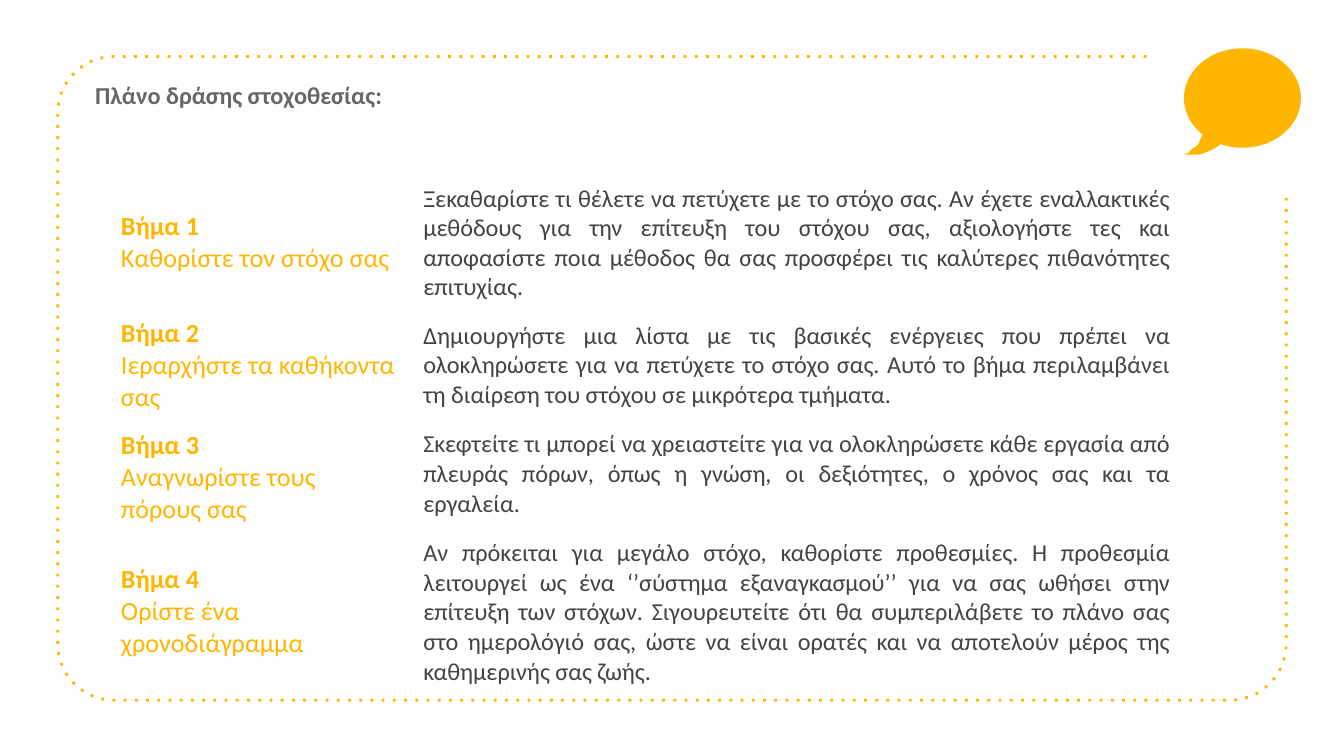
import math
from dataclasses import dataclass

from lxml import etree
from pptx import Presentation
from pptx.dml.color import RGBColor
from pptx.enum.text import MSO_ANCHOR, PP_ALIGN
from pptx.oxml.ns import qn
from pptx.util import Inches, Pt

AMBER = RGBColor(0xFF, 0xB6, 0x00)
GRAY = RGBColor(0x66, 0x66, 0x66)
DARK = RGBColor(0x43, 0x43, 0x43)
FONT = "Calibri"
TOP, MIDDLE = MSO_ANCHOR.TOP, MSO_ANCHOR.MIDDLE
LEFT, JUSTIFY = PP_ALIGN.LEFT, PP_ALIGN.JUSTIFY

Point = tuple[float, float]


@dataclass
class Step:
    task: str
    detail: str
    height: float
    anchor: MSO_ANCHOR = TOP


STEPS = [
    Step("Καθορίστε τον στόχο σας",
         "Ξεκαθαρίστε τι θέλετε να πετύχετε με το στόχο σας. Αν έχετε εναλλακτικές "
         "μεθόδους για την επίτευξη του στόχου σας, αξιολογήστε τες και αποφασίστε "
         "ποια μέθοδος θα σας προσφέρει τις καλύτερες πιθανότητες επιτυχίας.", 0.72),
    Step("Ιεραρχήστε τα καθήκοντα σας",
         "Δημιουργήστε μια λίστα με τις βασικές ενέργειες που πρέπει να ολοκληρώσετε "
         "για να πετύχετε το στόχο σας. Αυτό το βήμα περιλαμβάνει τη διαίρεση του "
         "στόχου σε μικρότερα τμήματα.", 0.85, MIDDLE),
    Step("Αναγνωρίστε τους πόρους σας",
         "Σκεφτείτε τι μπορεί να χρειαστείτε για να ολοκληρώσετε κάθε εργασία από "
         "πλευράς πόρων, όπως η γνώση, οι δεξιότητες, ο χρόνος σας και τα εργαλεία.",
         0.41),
    Step("Ορίστε ένα χρονοδιάγραμμα",
         "Αν πρόκειται για μεγάλο στόχο, καθορίστε προθεσμίες. Η προθεσμία λειτουργεί "
         "ως ένα ‘’σύστημα εξαναγκασμού’’ για να σας ωθήσει στην επίτευξη των στόχων. "
         "Σιγουρευτείτε ότι θα συμπεριλάβετε το πλάνο σας στο ημερολόγιό σας, ώστε να "
         "είναι ορατές και να αποτελούν μέρος της καθημερινής σας ζωής.", 0.91),
]


def arc(cx: float, cy: float, rx: float, ry: float,
        start: float, end: float, count: int) -> list[Point]:
    """Points along an ellipse, in degrees clockwise from the right."""
    angles = [math.radians(start + (end - start) * i / count) for i in range(count + 1)]
    return [(cx + rx * math.cos(a), cy + ry * math.sin(a)) for a in angles]


def add_outline(slide, points: list[Point], close: bool):
    pts = [(Inches(x), Inches(y)) for x, y in points]
    builder = slide.shapes.build_freeform(*pts[0])
    builder.add_line_segments(pts[1:], close=close)
    s = builder.convert_to_shape()
    s.shadow.inherit = False
    return s


def write(p, text: str, *, size: float, color: RGBColor,
          bold: bool = False, align: PP_ALIGN = LEFT) -> None:
    p.alignment = align
    r = p.add_run()
    r.text = text
    r.font.name, r.font.size, r.font.bold = FONT, Pt(size), bold
    r.font.color.rgb = color


def add_frame(slide) -> None:
    radius = 0.42
    points = [(8.53, 0.42)]
    for cx, cy, start in ((0.85, 0.84, 270), (0.85, 4.79, 180), (9.15, 4.79, 90)):
        points += arc(cx, cy, radius, radius, start, start - 90, 16)
    points.append((9.57, 1.46))
    s = add_outline(slide, points, close=False)
    s.fill.background()
    s.line.color.rgb = AMBER
    s.line.width = Pt(1.5)
    ln = s._element.spPr.find(qn("a:ln"))
    etree.SubElement(ln, qn("a:prstDash")).set("val", "dot")


def add_bubble(slide) -> None:
    tail = [(8.94, 1.02), (8.93, 1.04), (8.92, 1.07), (8.9, 1.09), (8.88, 1.1),
            (8.86, 1.12), (8.84, 1.14), (8.81, 1.15), (8.88, 1.15), (8.92, 1.15),
            (8.96, 1.14), (9.01, 1.12), (9.06, 1.09)]
    body = arc(9.245, 0.73, 0.435, 0.37, 112, -227, 90)
    s = add_outline(slide, body + tail, close=True)
    s.fill.solid()
    s.fill.fore_color.rgb = AMBER
    s.line.fill.background()


def add_title(slide, text: str) -> None:
    s = slide.shapes.add_textbox(Inches(0.61), Inches(0.5), Inches(6.84), Inches(0.5))
    tf = s.text_frame
    tf.word_wrap = True
    tf.margin_left = tf.margin_right = tf.margin_top = tf.margin_bottom = Inches(0.1)
    p = tf.paragraphs[0]
    p.space_before = Pt(6)
    write(p, text, size=13, color=GRAY, bold=True)


def add_steps(slide, steps: list[Step]) -> None:
    height = sum(step.height for step in steps)
    table = slide.shapes.add_table(len(steps), 2, Inches(0.8), Inches(1.32),
                                   Inches(8), Inches(height)).table
    table.first_row = table.horz_banding = False
    for col, width in zip(table.columns, (2.25, 5.75)):
        col.width = Inches(width)
    for i, step in enumerate(steps):
        table.rows[i].height = Inches(step.height)
        label, detail = table.cell(i, 0), table.cell(i, 1)
        for cell, anchor in ((label, MIDDLE), (detail, step.anchor)):
            cell.fill.background()
            cell.vertical_anchor = anchor
            cell.margin_bottom = Inches(0.06)
        tf = label.text_frame
        write(tf.paragraphs[0], f"Βήμα {i + 1}", size=14, color=AMBER, bold=True)
        write(tf.add_paragraph(), step.task, size=14, color=AMBER)
        write(detail.text_frame.paragraphs[0], step.detail,
              size=13, color=DARK, align=JUSTIFY)


def main() -> None:
    prs = Presentation()
    # Widescreen 16:9
    prs.slide_width = Inches(10)
    prs.slide_height = prs.slide_width * 9 // 16
    slide = prs.slides.add_slide(prs.slide_layouts[6])

    # Dotted frame, open at the top right for the speech bubble
    add_frame(slide)
    add_title(slide, "Πλάνο δράσης στοχοθεσίας:")
    add_bubble(slide)

    # Action plan
    add_steps(slide, STEPS)
    prs.save("out.pptx")


if __name__ == "__main__":
    main()
